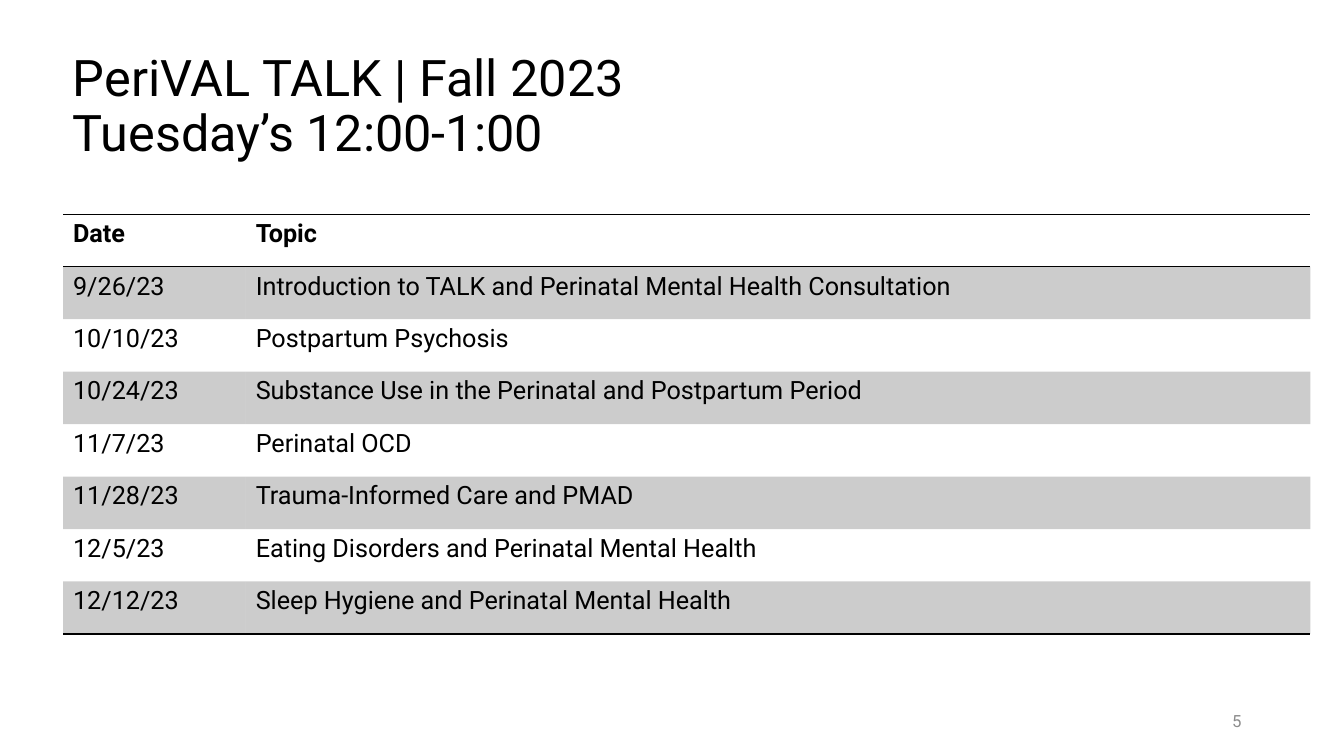
from lxml.etree import SubElement
from pptx import Presentation
from pptx.dml.color import RGBColor
from pptx.enum.text import MSO_ANCHOR as Anchor, PP_ALIGN as Align
from pptx.oxml.ns import qn
from pptx.util import Emu, Pt

EMU_PER_PX = 9525
FONT = "Roboto"
BLACK, GREY = "000000", "8C8C8C"
BAND_ALPHA = 20
PLAIN_TABLE_STYLE = "{2D5ABB26-0587-4C30-8999-92F81FD0307C}"

TITLE_LINES = ["PeriVAL TALK | Fall 2023", "Tuesday’s 12:00-1:00"]
SCHEDULE = [
    ("Date", "Topic"),
    ("9/26/23", "Introduction to TALK and Perinatal Mental Health Consultation"),
    ("10/10/23", "Postpartum Psychosis"),
    ("10/24/23", "Substance Use in the Perinatal and Postpartum Period"),
    ("11/7/23", "Perinatal OCD"),
    ("11/28/23", "Trauma-Informed Care and PMAD"),
    ("12/5/23", "Eating Disorders and Perinatal Mental Health"),
    ("12/12/23", "Sleep Hygiene and Perinatal Mental Health"),
]
COLUMN_WIDTHS = [174, 1014]
ROW_HEIGHT = 50


def px(length):
    return Emu(length * EMU_PER_PX)


def rgb(color):
    return RGBColor.from_string(color)


def style_font(para, size, color, bold=False):
    font = para.font
    font.name, font.size, font.bold = FONT, Pt(size), bold
    font.color.rgb = rgb(color)


def add_text(page, left, top, width, height, lines, size, color,
             align=Align.LEFT, anchor=Anchor.TOP, spacing=1.0):
    """Add one paragraph whose lines are parted by line breaks."""
    box = page.shapes.add_textbox(px(left), px(top), px(width), px(height))
    frame = box.text_frame
    frame.word_wrap = True
    frame.vertical_anchor = anchor
    para = frame.paragraphs[0]
    para.alignment, para.line_spacing = align, spacing
    for index, line in enumerate(lines):
        if index:
            para.add_line_break()
        para.add_run().text = line
    style_font(para, size, color)


def add_rule(cell, side):
    """Draw a 1 pt black border; side is the tag lnT or lnB."""
    line = SubElement(cell._tc.get_or_add_tcPr(), qn(f"a:{side}"), w=str(Pt(1)))
    fill = SubElement(line, qn("a:solidFill"))
    SubElement(fill, qn("a:srgbClr"), val=BLACK)


def fill_band(cell):
    """Fill with translucent black."""
    cell.fill.solid()
    cell.fill.fore_color.rgb = rgb(BLACK)
    color = cell._tc.tcPr.find(qn("a:solidFill"))[0]
    SubElement(color, qn("a:alpha"), val=str(BAND_ALPHA * 1000))


def add_schedule(page, left, top):
    last = len(SCHEDULE) - 1
    frame = page.shapes.add_table(
        len(SCHEDULE), len(COLUMN_WIDTHS), px(left), px(top),
        px(sum(COLUMN_WIDTHS)), px(ROW_HEIGHT * len(SCHEDULE)))
    table = frame.table
    table._tbl.tblPr.find(qn("a:tableStyleId")).text = PLAIN_TABLE_STYLE
    table.horz_banding = False
    for column, width in zip(table.columns, COLUMN_WIDTHS):
        column.width = px(width)
    for row, texts in enumerate(SCHEDULE):
        for col, text in enumerate(texts):
            cell = table.cell(row, col)
            cell.text = text
            style_font(cell.text_frame.paragraphs[0], 18, BLACK, bold=row == 0)
            if row == 0:
                add_rule(cell, "lnT")
            if row in (0, last):
                add_rule(cell, "lnB")
            if row % 2:
                fill_band(cell)
            else:
                cell.fill.background()


def main():
    deck = Presentation()
    deck.slide_width, deck.slide_height = px(1280), px(720)
    page = deck.slides.add_slide(deck.slide_layouts[6])
    add_text(page, 60, 46, 1160, 191, TITLE_LINES, 36, BLACK, spacing=0.9)
    add_text(page, 904, 667, 288, 38, ["5"], 12, GREY,
             align=Align.RIGHT, anchor=Anchor.MIDDLE)
    add_schedule(page, 60, 204)
    deck.save("out.pptx")


if __name__ == "__main__":
    main()
